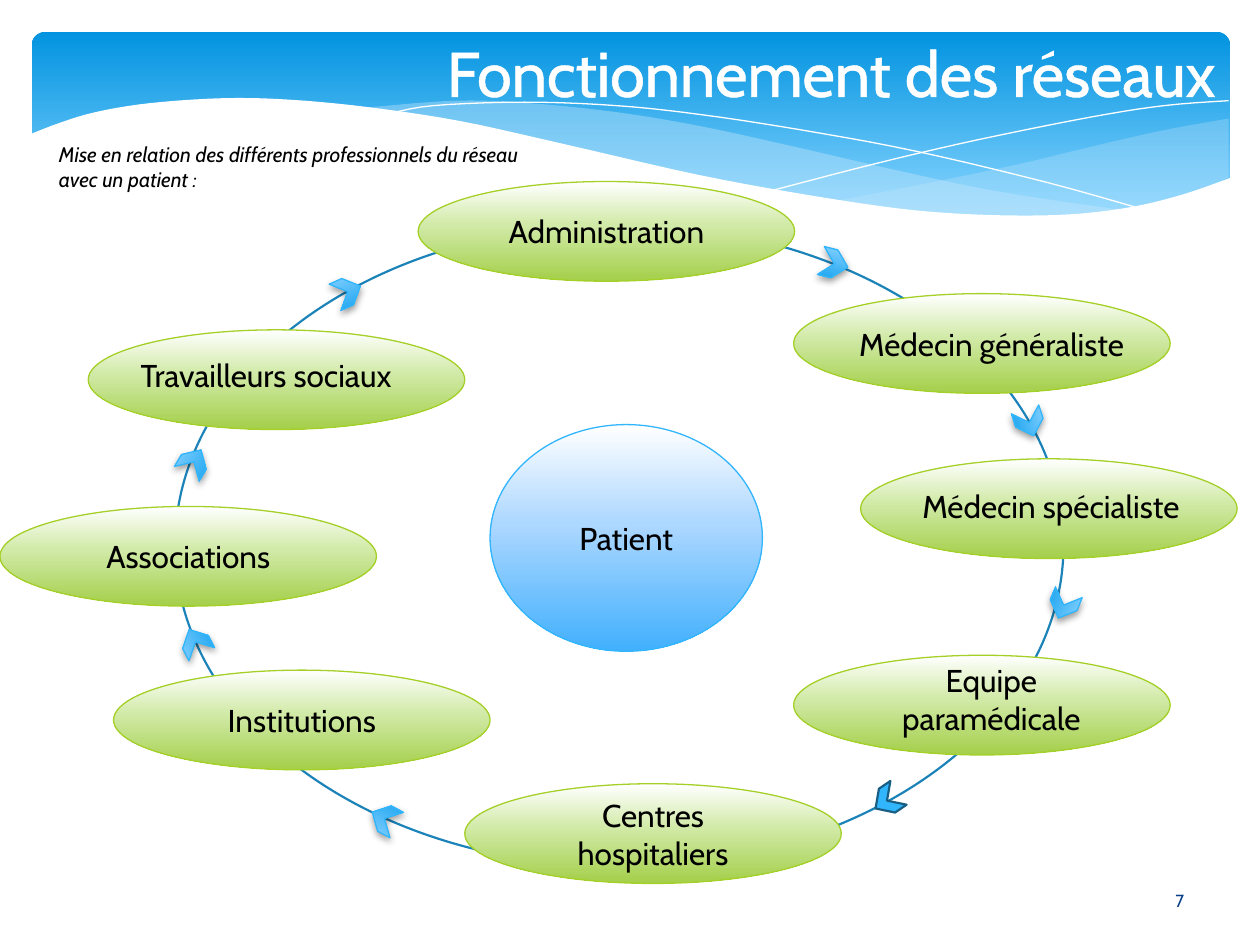
from dataclasses import dataclass

from lxml.etree import SubElement
from pptx import Presentation
from pptx.dml.color import RGBColor as RGB
from pptx.enum.shapes import MSO_SHAPE as Shp
from pptx.enum.text import MSO_ANCHOR as Anchor, PP_ALIGN as Al
from pptx.oxml.ns import qn
from pptx.util import Cm, Pt


@dataclass(frozen=True)
class Theme:
    font: str = "Cabin"
    white: str = "FFFFFF"
    black: str = "000000"
    navy: str = "073E87"
    wave: str = "C6E7FC"
    ring: str = "1C83B9"
    green: str = "A5D028"
    blue: str = "31B6FD"
    dark_blue: str = "195F84"
    header_grad: tuple = ((0, "0293E0"), (90, "83D3FE"))
    green_grad: tuple = ((0, "FFFFFF"), (44, "D1EAA7"), (100, "A4CF4A"))
    blue_grad: tuple = ((0, "FFFFFF"), (44, "ACD7FF"), (100, "42B0FD"))
    arrow_grad: tuple = ((0, "8CD3FF"), (100, "14A2EF"))
    title: int = 36
    body: int = 18
    caption: int = 12
    number: int = 10


def smooth(points, steps=5):
    """Return a Catmull-Rom curve through the given points."""
    ends = [points[0], *points, points[-1]]
    curve = [points[0]]
    for a, b, c, d in zip(ends, ends[1:], ends[2:], ends[3:]):
        for i in range(1, steps + 1):
            t = i / steps
            curve.append(tuple(
                (2 * q + (r - p) * t + (2 * p - 5 * q + 4 * r - s) * t ** 2
                 + (3 * q - p - 3 * r + s) * t ** 3) / 2
                for p, q, r, s in zip(a, b, c, d)))
    return curve


class Deck:
    def __init__(self, prs, theme):
        self.theme = theme
        self.s = prs.slides.add_slide(prs.slide_layouts[6])

    def paint(self, sp, fill=None, line=None, width=0.75, alpha=None):
        sp.shadow.inherit = False
        if fill is None:
            sp.fill.background()
        elif isinstance(fill, str):
            sp.fill.solid()
            sp.fill.fore_color.rgb = RGB.from_string(fill)
            if alpha:
                clr = sp._element.spPr.find(qn("a:solidFill"))[0]
                SubElement(clr, qn("a:alpha"), val=str(alpha * 1000))
        else:
            sp.fill.gradient()
            sp.fill.gradient_angle = 270
            stops = sp._element.spPr.find(qn("a:gradFill")).find(qn("a:gsLst"))
            for old in list(stops):
                stops.remove(old)
            for pos, color in fill:
                gs = SubElement(stops, qn("a:gs"), pos=str(pos * 1000))
                SubElement(gs, qn("a:srgbClr"), val=color)
        if line:
            sp.line.color.rgb = RGB.from_string(line)
            sp.line.width = Pt(width)
        else:
            sp.line.fill.background()
        return sp

    def shape(self, kind, box, fill, line=None, width=0.75):
        sp = self.s.shapes.add_shape(kind, *map(Cm, box))
        return self.paint(sp, fill, line, width)

    def freeform(self, points, closed=True, **style):
        pts = [(Cm(x), Cm(y)) for x, y in points]
        fb = self.s.shapes.build_freeform(*pts[0])
        fb.add_line_segments(pts[1:], close=closed)
        return self.paint(fb.convert_to_shape(), **style)

    def fill_text(self, sp, lines, size, color, align=Al.CENTER, italic=False):
        tf = sp.text_frame
        tf.word_wrap = True
        for i, line in enumerate(lines.split("\n")):
            p = tf.add_paragraph() if i else tf.paragraphs[0]
            p.alignment = align
            r = p.add_run()
            r.text = line
            r.font.name, r.font.size, r.font.italic = self.theme.font, Pt(size), italic
            r.font.color.rgb = RGB.from_string(color)
        return tf

    def text(self, box, lines, size, color, **style):
        sp = self.s.shapes.add_textbox(*map(Cm, box))
        return self.fill_text(sp, lines, size, color, **style)

    def title(self, box, text):
        tf = self.text(box, text, self.theme.title, self.theme.white, align=Al.LEFT)
        rpr = tf.paragraphs[0].runs[0].font._element
        ln = SubElement(rpr, qn("a:ln"), w=str(Pt(1.45)))
        SubElement(SubElement(ln, qn("a:solidFill")), qn("a:srgbClr"), val=self.theme.white)
        rpr.insert(0, ln)

    def oval(self, box, fill, line, label=None):
        sp = self.shape(Shp.OVAL, box, fill, line)
        if label:
            self.fill_text(sp, label, self.theme.body, self.theme.black)

    def chevron(self, x, y, angle, plain=False):
        t, box = self.theme, (x, y, 0.56, 0.58)
        if plain:
            sp = self.shape(Shp.CHEVRON, box, t.blue, t.dark_blue, 1.25)
        else:
            sp = self.shape(Shp.CHEVRON, box, t.arrow_grad, t.blue)
            shadow = SubElement(sp._element.spPr.find(qn("a:effectLst")), qn("a:outerShdw"),
                                blurRad=str(Pt(4)), dist=str(Pt(2)), dir="5400000", rotWithShape="0")
            clr = SubElement(shadow, qn("a:srgbClr"), val=t.black)
            SubElement(clr, qn("a:alpha"), val="38000")
        sp.rotation = angle


RIGHT_WAVE = (
    [(24.77, 2.39), (23.39, 2.64), (21.87, 2.99), (20.45, 3.33), (18.52, 3.73), (16.79, 4.06)],
    [(16.79, 4.06), (18.24, 4.23), (19.53, 4.34), (20.68, 4.37), (21.69, 4.34), (22.58, 4.25),
     (23.39, 4.06), (24.1, 3.86), (24.77, 3.58)])
LONG_WAVE = (
    [(22.68, 4.24), (21.26, 4.04), (19.69, 3.78), (17.93, 3.4), (15.98, 2.95), (14.1, 2.54),
     (12.42, 2.26), (10.67, 2.08), (9.17, 2.03), (7.26, 2.18)],
    [(7.26, 2.18), (9.19, 2.46), (11.4, 2.95), (13.46, 3.43), (15.27, 3.81), (17.27, 4.14),
     (19, 4.32), (20.78, 4.39), (21.77, 4.34), (22.68, 4.24)])
FALLING_LINE = [(7.85, 2.29), (8.74, 2.13), (10.57, 2.06), (12.42, 2.13), (14.12, 2.31),
                (16.15, 2.62), (18.47, 3.05), (21.11, 3.68), (23.04, 4.22)]
RISING_LINE = [(15.57, 3.84), (17.65, 3.3), (19.71, 2.82), (22, 2.36), (23.47, 2.13), (24.77, 2.03)]
HEADER_EDGE = [(24.82, 3.58), (23.88, 3.91), (22.83, 4.17), (21.59, 4.32), (20.14, 4.34),
               (18.44, 4.24), (16.46, 3.96), (14.1, 3.53), (11.35, 2.9), (9.27, 2.44),
               (7.42, 2.16), (5.84, 2.01), (4.5, 1.98), (3.02, 2.08), (1.93, 2.26),
               (1.17, 2.49), (0.58, 2.72)]
ACTORS = [(8.43, 3.66, "Administration"), (16, 5.92, None), (17.35, 9.25, None),
          (16, 13.21, None), (9.37, 15.8, "Centres hospitaliers"),
          (2.29, 13.51, "Institutions"), (0, 10.21, "Associations"), (1.78, 6.65, None)]
LABELS = [((16, 6.43, 7.98, 1.02), "Médecin généraliste"),
          ((17.91, 9.7, 6.55, 1.02), "Médecin spécialiste"),
          ((16.38, 13.21, 7.21, 1.8), "Equipe\nparamédicale"),
          ((2.29, 7.06, 6.15, 1.02), "Travailleurs sociaux")]
CHEVRONS = [(16.54, 5.03, 14), (20.47, 8.23, 72), (21.16, 11.91, 112), (17.6, 15.85, 145.7, True),
            (7.47, 16.21, 208), (3.66, 12.65, 243), (3.63, 9.02, 300.6), (6.73, 5.59, 336)]


def main():
    prs = Presentation()
    prs.slide_width, prs.slide_height = Cm(25.4), Cm(19.05)
    t = Theme()
    deck = Deck(prs, t)

    header = deck.shape(Shp.ROUNDED_RECTANGLE, (0.64, 0.64, 24.16, 3.96), t.header_grad)
    header.adjustments[0] = 0.07
    for (top, bottom), alpha in ((RIGHT_WAVE, 29), (LONG_WAVE, 40)):
        deck.freeform(smooth(top) + smooth(bottom), fill=t.wave, alpha=alpha)
    for line in (FALLING_LINE, RISING_LINE):
        deck.freeform(smooth(line), closed=False, line=t.white, width=0)
    deck.freeform(smooth(HEADER_EDGE) + [(0.58, 5.69), (24.82, 5.69)], fill=t.white)

    deck.shape(Shp.OVAL, (3.53, 4.52, 17.91, 12.95), t.white, t.ring, 1.25)
    for x, y, label in ACTORS:
        deck.oval((x, y, 7.59, 2.01), t.green_grad, t.green, label)
    deck.oval((9.88, 8.56, 5.49, 4.57), t.blue_grad, t.blue, "Patient")
    for box, label in LABELS:
        deck.text(box, label, t.body, t.black)
    for chevron in CHEVRONS:
        deck.chevron(*chevron)

    deck.title((8.76, 0.56, 17.17, 1.8), "Fonctionnement des réseaux")
    deck.text((0.94, 2.72, 10.36, 1.27),
              "Mise en relation des différents professionnels du réseau avec un patient :",
              t.caption, t.black, align=Al.LEFT, italic=True)
    number = deck.text((22.17, 17.65, 3.23, 1.02), "7", t.number, t.navy)
    number.vertical_anchor = Anchor.MIDDLE
    prs.save("out.pptx")


if __name__ == "__main__":
    main()
